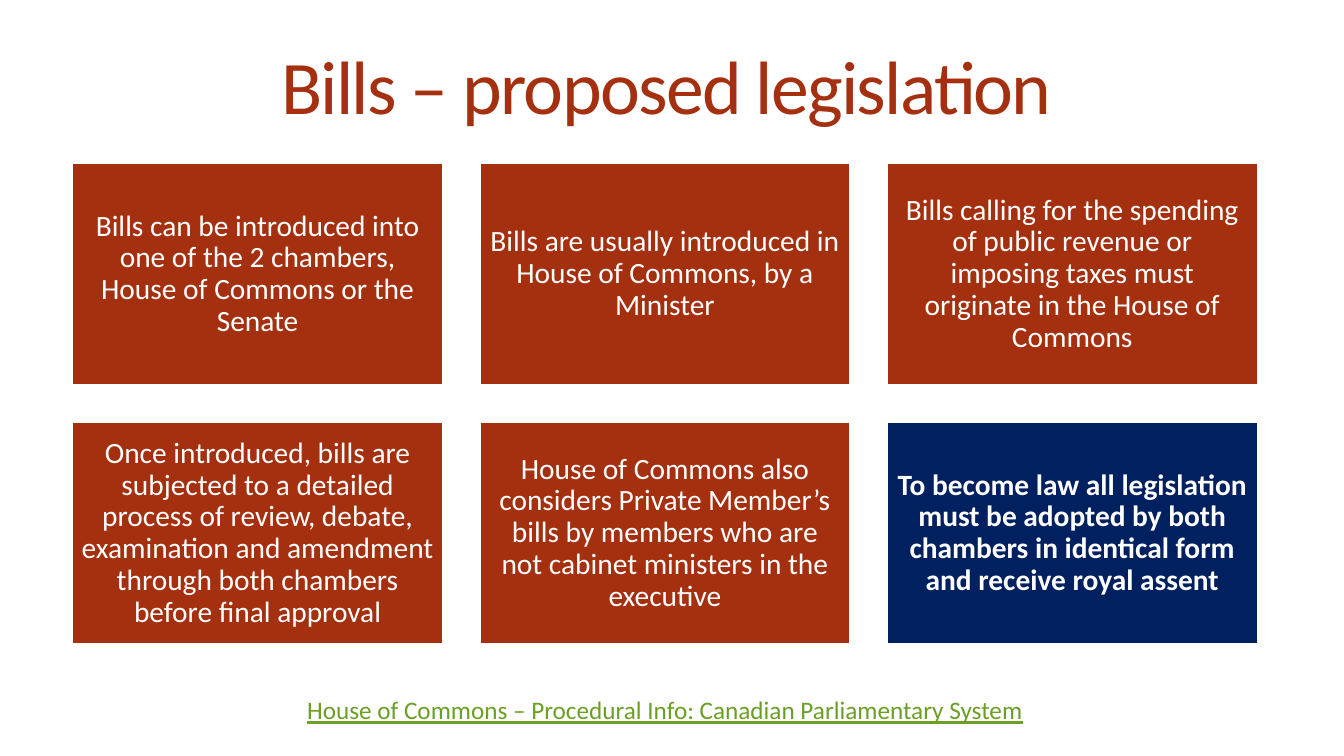
from pptx import Presentation
from pptx.dml.color import RGBColor
from pptx.enum.shapes import MSO_SHAPE
from pptx.enum.text import MSO_ANCHOR, PP_ALIGN
from pptx.util import Inches, Pt

COLORS = {"rust": "A5300F", "navy": "002060", "white": "FFFFFF", "link": "6B9F25"}
COLUMNS = 3
LEFT, TOP = 0.72, 1.62
CARD_WIDTH, CARD_HEIGHT = 3.67, 2.2
GAP = 0.37
CARD_MARGIN = Inches(0.09)

CARDS = [
    "Bills can be introduced into one of the 2 chambers, House of Commons or the Senate",
    "Bills are usually introduced in House of Commons, by a Minister",
    "Bills calling for the spending of public revenue or imposing taxes must originate "
    "in the House of Commons",
    "Once introduced, bills are subjected to a detailed process of review, debate, "
    "examination and amendment through both chambers before final approval",
    "House of Commons also considers Private Member’s bills by members who are not "
    "cabinet ministers in the executive",
    "To become law all legislation must be adopted by both chambers in identical form "
    "and receive royal assent",
]


def write_text(shape, text, size, color, line_spacing=1.0):
    """Fill the shape with one centred paragraph and return its run."""
    text_frame = shape.text_frame
    text_frame.word_wrap = True
    text_frame.vertical_anchor = MSO_ANCHOR.MIDDLE
    text_frame.text = text
    paragraph = text_frame.paragraphs[0]
    paragraph.alignment = PP_ALIGN.CENTER
    paragraph.line_spacing = line_spacing
    run = paragraph.runs[0]
    run.font.name = "Calibri"
    run.font.size = Pt(size)
    run.font.color.rgb = RGBColor.from_string(COLORS[color])
    return run


presentation = Presentation()
presentation.slide_width = Inches(13.33)
presentation.slide_height = Inches(7.5)
slide = presentation.slides.add_slide(presentation.slide_layouts[6])

title = slide.shapes.add_textbox(Inches(LEFT), 0, Inches(11.78), Inches(1.81))
title_run = write_text(title, "Bills – proposed legislation", 54, "rust", 0.85)
title_run.font._element.set("spc", "-120")

for index, text in enumerate(CARDS):
    row, column = divmod(index, COLUMNS)
    is_conclusion = index == len(CARDS) - 1
    card = slide.shapes.add_shape(
        MSO_SHAPE.RECTANGLE,
        Inches(LEFT + column * (CARD_WIDTH + GAP)),
        Inches(TOP + row * (CARD_HEIGHT + GAP)),
        Inches(CARD_WIDTH),
        Inches(CARD_HEIGHT),
    )
    card.shadow.inherit = False
    card.fill.solid()
    card.fill.fore_color.rgb = RGBColor.from_string(COLORS["navy" if is_conclusion else "rust"])
    card.line.color.rgb = RGBColor.from_string(COLORS["white"])
    card.line.width = Pt(1)
    text_frame = card.text_frame
    text_frame.margin_left = text_frame.margin_right = CARD_MARGIN
    text_frame.margin_top = text_frame.margin_bottom = CARD_MARGIN
    card_run = write_text(card, text, 21, "white", 0.9)
    card_run.font.bold = is_conclusion

reference = slide.shapes.add_textbox(Inches(0.77), Inches(6.84), Inches(11.65), Inches(0.4))
reference_run = write_text(
    reference, "House of Commons – Procedural Info: Canadian Parliamentary System", 18, "link"
)
reference_run.font.underline = True

presentation.save("out.pptx")
